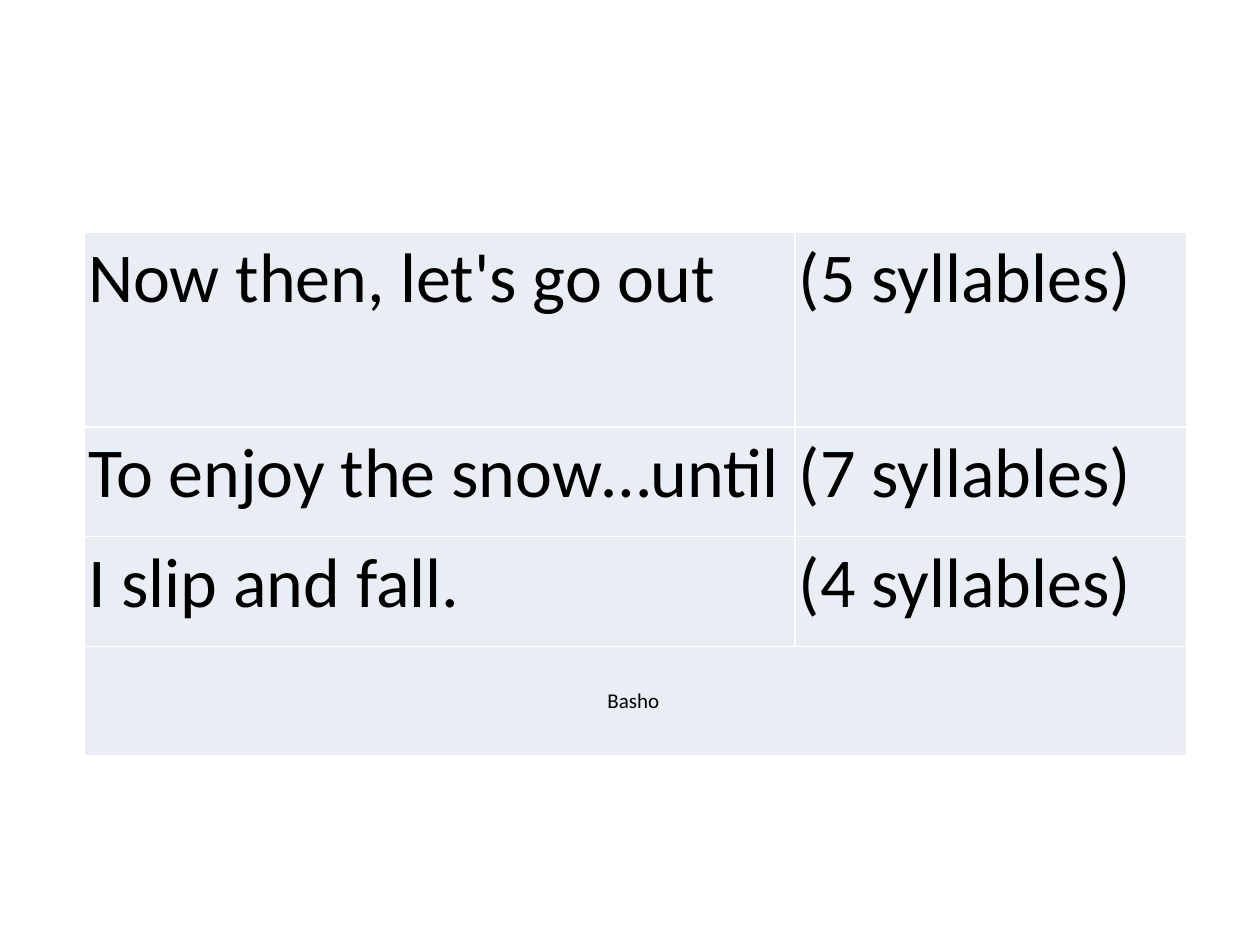
from lxml import etree
from pptx import Presentation
from pptx import util as u
from pptx.dml.color import RGBColor
from pptx.enum import text
from pptx.oxml.ns import qn

PALE = RGBColor(0xE9, 0xED, 0xF4)
WHITE = RGBColor(0xFF, 0xFF, 0xFF)
BLACK = RGBColor(0, 0, 0)
FONT = "Calibri"
COLS = (5.64, 3.11)
ROWS = (1.55, 0.87, 0.87, 0.87)
LINES = (
    ("Now then, let's go out", "(5 syllables)"),
    ("To enjoy the snow…until", "(7 syllables)"),
    ("I slip and fall.", "(4 syllables)"),
)
POET = "Basho "


def set_borders(cell, color, width):
    """Draw a solid line on all four sides of a cell."""
    tcPr = cell._tc.get_or_add_tcPr()
    for i, side in enumerate(("lnL", "lnR", "lnT", "lnB")):
        ln = etree.Element(qn(f"a:{side}"), w=str(u.Pt(width)))
        fill = etree.SubElement(ln, qn("a:solidFill"))
        etree.SubElement(fill, qn("a:srgbClr"), val=str(color))
        tcPr.insert(i, ln)


def style_cell(cell):
    """Give a cell its fill, borders and narrow margins."""
    cell.fill.solid()
    cell.fill.fore_color.rgb = PALE
    set_borders(cell, WHITE, 1)
    cell.margin_left = cell.margin_right = u.Inches(0.03)
    cell.margin_top = cell.margin_bottom = u.Inches(0.03)


def write(cell, words, size, align=text.PP_ALIGN.LEFT):
    """Put one paragraph of text into a cell."""
    p = cell.text_frame.paragraphs[0]
    p.text = words
    p.alignment = align
    p.font.name = FONT
    p.font.size = u.Pt(size)
    p.font.color.rgb = BLACK


def add_grid(s, left, top):
    """Add a plain table with the column and row sizes of the poem."""
    gf = s.shapes.add_table(len(ROWS), len(COLS), u.Inches(left), u.Inches(top),
                            u.Inches(sum(COLS)), u.Inches(sum(ROWS)))
    table = gf.table
    table.first_row = table.horz_banding = False
    for col, width in zip(table.columns, COLS):
        col.width = u.Inches(width)
    for row, height in zip(table.rows, ROWS):
        row.height = u.Inches(height)
    for cell in table.iter_cells():
        style_cell(cell)
    return table


def add_poem(s):
    """Fill the table with the haiku, its syllable counts and its poet."""
    table = add_grid(s, 0.67, 1.84)
    for r, line in enumerate(LINES):
        for c, words in enumerate(line):
            write(table.cell(r, c), words, 40)
    last = len(ROWS) - 1
    poet = table.cell(last, 0)
    poet.merge(table.cell(last, len(COLS) - 1))
    poet.vertical_anchor = text.MSO_ANCHOR.MIDDLE
    write(poet, POET, 12, text.PP_ALIGN.CENTER)


def main():
    """Build the slide and save it."""
    prs = Presentation()
    prs.slide_width, prs.slide_height = u.Inches(10), u.Inches(7.5)
    s = prs.slides.add_slide(prs.slide_layouts[6])
    add_poem(s)
    prs.save("out.pptx")


if __name__ == "__main__":
    main()
